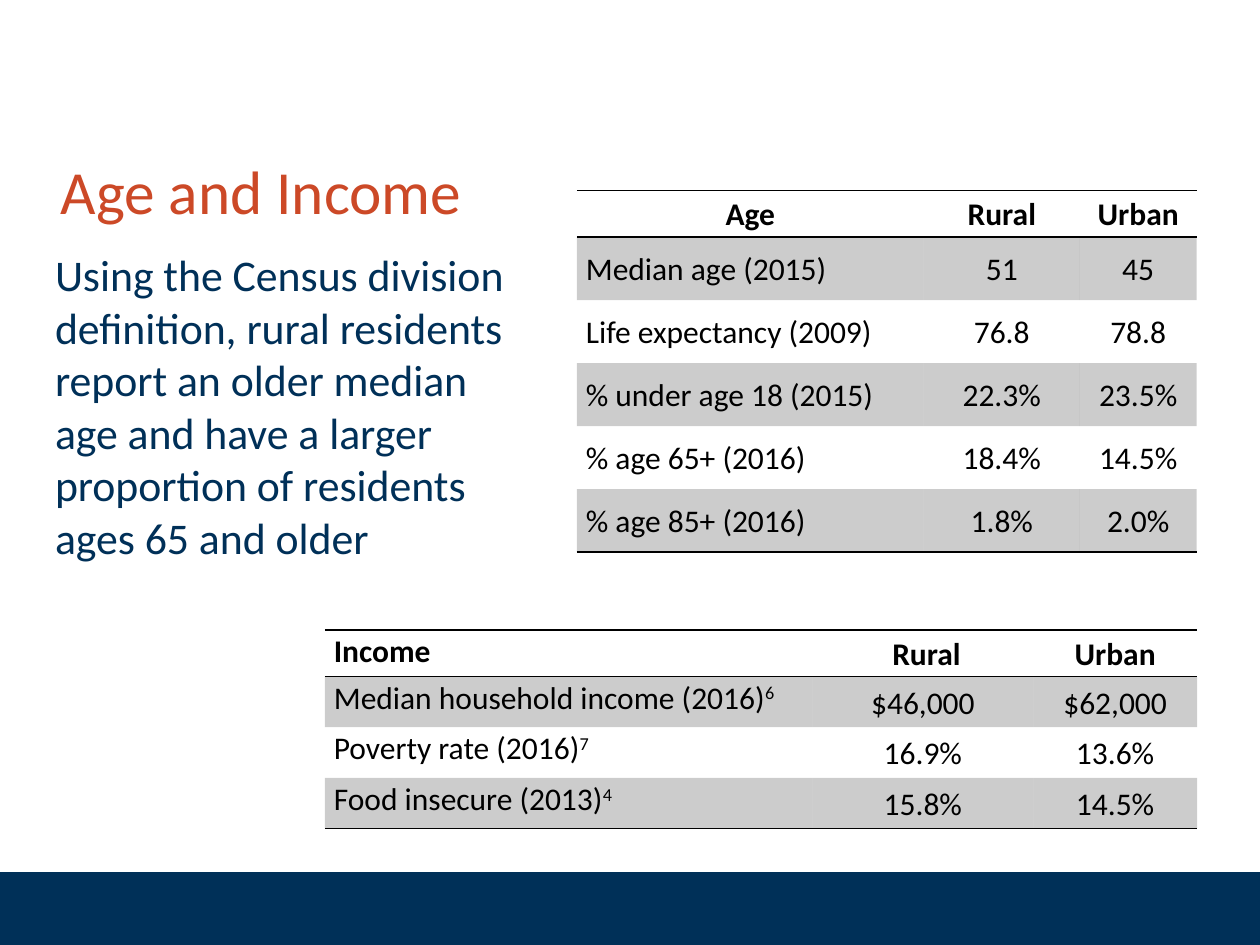
import pptx
import pptx.util
import pptx.dml.color
import pptx.enum.shapes
import pptx.enum.text
import pptx.oxml
import pptx.oxml.ns

Cm = pptx.util.Cm
Pt = pptx.util.Pt
ALIGN = pptx.enum.text.PP_ALIGN
ANCHOR = pptx.enum.text.MSO_ANCHOR
NS = pptx.oxml.ns.nsdecls("a")


def paint(font, size, tint, bold=False):
    font.name = "Calibri"
    font.size = Pt(size)
    font.bold = bold
    font.color.rgb = color(tint)


def color(tint):
    return pptx.dml.color.RGBColor.from_string(tint)


deck = pptx.Presentation()
deck.slide_width = Cm(25.4)
deck.slide_height = Cm(19.05)
slide = deck.slides.add_slide(deck.slide_layouts[6])

bar = slide.shapes.add_shape(
    pptx.enum.shapes.MSO_SHAPE.RECTANGLE, 0, Cm(17.58), Cm(25.4), Cm(1.7))
bar.shadow.inherit = False
bar.fill.solid()
bar.fill.fore_color.rgb = color("003058")
bar.line.fill.background()

body = ("Using the Census division definition, rural residents report an "
        "older median age and have a larger proportion of residents ages 65 "
        "and older")
texts = [
    (body, 0.86, 4.88, 10.16, 25, "003058", ALIGN.LEFT, ANCHOR.TOP),
    ("Age and Income", 0.43, 3.2, 1.27, 35, "CC4927", ALIGN.CENTER, ANCHOR.MIDDLE),
]
for text, left, top, high, size, tint, align, anchor in texts:
    frame = slide.shapes.add_textbox(Cm(left), Cm(top), Cm(9.68), Cm(high)).text_frame
    frame.word_wrap = True
    frame.vertical_anchor = anchor
    frame.text = text
    para = frame.paragraphs[0]
    para.alignment = align
    paint(para.runs[0].font, size, tint)

age = [
    ("Age", "Rural", "Urban"),
    ("Median age (2015)", "51", "45"),
    ("Life expectancy (2009)", "76.8", "78.8"),
    ("% under age 18 (2015)", "22.3%", "23.5%"),
    ("% age 65+ (2016)", "18.4%", "14.5%"),
    ("% age 85+ (2016)", "1.8%", "2.0%"),
]
income = [
    ("Income", " Rural", "Urban"),
    ("Median household income (2016)^6", "$46,000", "$62,000"),
    ("Poverty rate (2016)^7", "16.9%", "13.6%"),
    ("Food insecure (2013)^4", "15.8%", "14.5%"),
]
grids = [
    (age, 11.63, 3.84, (6.99, 3.15, 2.35), 1.27, ALIGN.CENTER, ANCHOR.MIDDLE),
    (income, 6.55, 12.7, (9.83, 4.45, 3.3), 1.02, ALIGN.LEFT, ANCHOR.TOP),
]
for data, left, top, wides, high, align, anchor in grids:
    last = len(data) - 1
    table = slide.shapes.add_table(
        len(data), 3, Cm(left), Cm(top), Cm(sum(wides)), Cm(0.94 + high * last)).table
    table.first_row = False
    table.horz_banding = False
    table._tbl.tblPr[0].text = "{2D5ABB26-0587-4C30-8999-92F81FD0307C}"
    for col, wide in zip(table.columns, wides):
        col.width = Cm(wide)
    for r, row in enumerate(data):
        table.rows[r].height = Cm(high if r else 0.94)
        for c, text in enumerate(row):
            cell = table.cell(r, c)
            cell.margin_left = cell.margin_right = Cm(0.18)
            cell.margin_top = cell.margin_bottom = 0
            cell.vertical_anchor = ANCHOR.MIDDLE if c else anchor
            para = cell.text_frame.paragraphs[0]
            para.line_spacing = 1.07
            para.alignment = ALIGN.CENTER if c else ALIGN.LEFT if r else align
            for n, part in enumerate(text.split("^")):
                run = para.add_run()
                run.text = part
                paint(run.font, 18, "000000", r == 0)
                if n:
                    run.font._rPr.set("baseline", "30000")
            props = cell._tc.get_or_add_tcPr()
            if r % 2:
                cell.fill.solid()
                cell.fill.fore_color.rgb = color("000000")
                shade = props.find(".//" + pptx.oxml.ns.qn("a:srgbClr"))
                shade.append(pptx.oxml.parse_xml(f'<a:alpha {NS} val="20000"/>'))
            else:
                cell.fill.background()
            sides = {0: ("lnT", "lnB"), last: ("lnB",)}.get(r, ())
            for n, side in enumerate(sides):
                props.insert(n, pptx.oxml.parse_xml(
                    f'<a:{side} {NS} w="12700"><a:solidFill>'
                    f'<a:srgbClr val="000000"/></a:solidFill></a:{side}>'))

deck.save("out.pptx")
